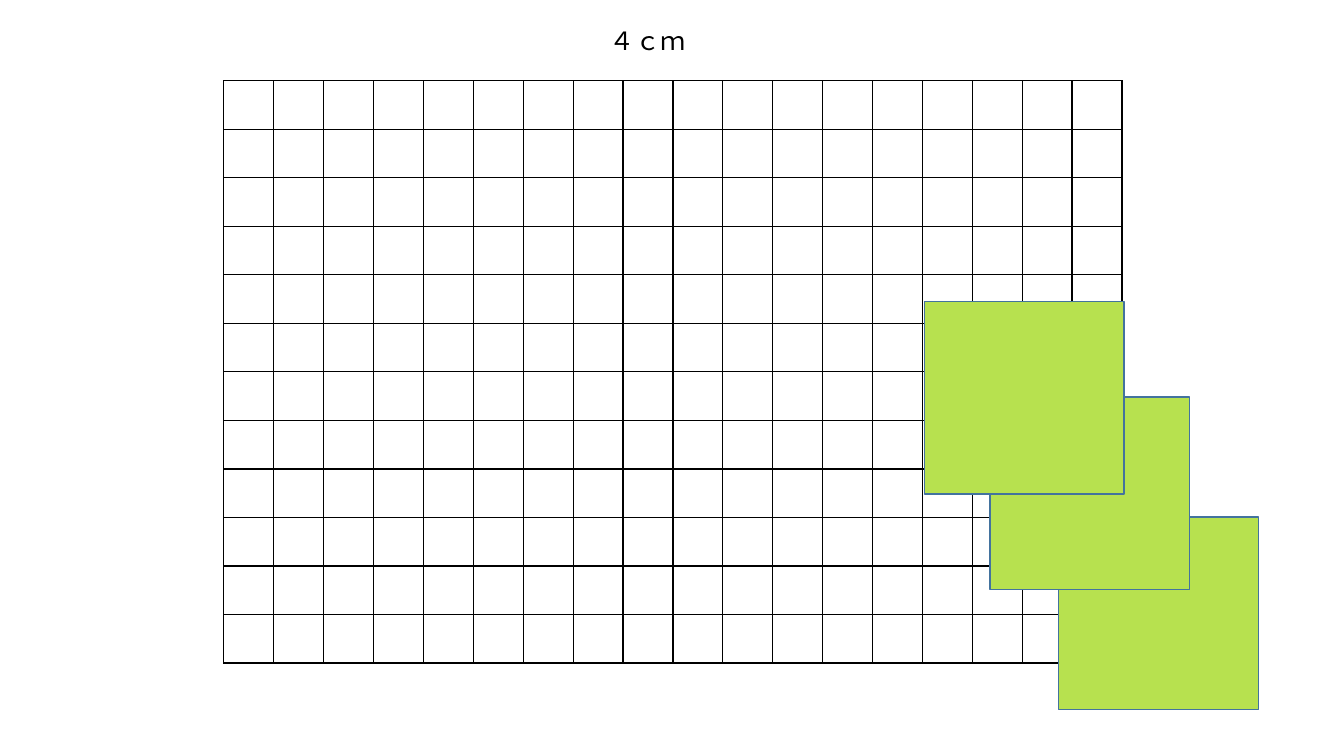
"""Build a slide with a squared grid, its length label and three loose squares."""
from dataclasses import dataclass

from lxml import etree
from pptx import Presentation
from pptx import util as u
from pptx.dml.color import RGBColor
from pptx.enum import shapes, text
from pptx.oxml.ns import qn


@dataclass(frozen=True)
class Theme:
    paper: str = "FFFFFF"
    ink: str = "000000"
    square: str = "B7E14F"
    square_edge: str = "43739E"
    font: str = "Calibri"
    label_size: int = 18
    line_width: int = 1


THEME = Theme()
SLIDE_SIZE = (13.33, 7.5)
LENGTH_LABEL = "４ｃｍ"
LABEL_BOX = (5.95, 0.2, 1.12, 0.4)
GRID = {"columns": 18, "rows": 12, "box": (2.22, 0.8, 8.91, 5.78)}
SQUARE_CORNERS = [(10.5, 5.13), (9.82, 3.94), (9.17, 2.99)]
SQUARE_SIZE = (1.98, 1.91)


def inches(lengths):
    return [u.Inches(length) for length in lengths]


def paint(fill, colour):
    fill.solid()
    fill.fore_color.rgb = RGBColor.from_string(colour)


def rule_cell(cell):
    properties = cell._tc.get_or_add_tcPr()
    for side in ("lnL", "lnR", "lnT", "lnB"):
        edge = etree.SubElement(properties, qn(f"a:{side}"), w=str(u.Pt(THEME.line_width)))
        ink = etree.SubElement(edge, qn("a:solidFill"))
        etree.SubElement(ink, qn("a:srgbClr"), val=THEME.ink)
    paint(cell.fill, THEME.paper)


def add_grid(slide):
    left, top, width, height = inches(GRID["box"])
    grid = slide.shapes.add_table(GRID["rows"], GRID["columns"], left, top, width, height).table
    grid.first_row = grid.horz_banding = False
    for column in grid.columns:
        column.width = width // GRID["columns"]
    for row in grid.rows:
        row.height = height // GRID["rows"]
    for cell in grid.iter_cells():
        rule_cell(cell)


def add_label(slide):
    frame = slide.shapes.add_textbox(*inches(LABEL_BOX)).text_frame
    frame.word_wrap = True
    frame.auto_size = text.MSO_AUTO_SIZE.SHAPE_TO_FIT_TEXT
    label = frame.paragraphs[0]
    label.text = LENGTH_LABEL
    label.font.name = THEME.font
    label.font.size = u.Pt(THEME.label_size)
    label.font.color.rgb = RGBColor.from_string(THEME.ink)


def add_square(slide, corner):
    square = slide.shapes.add_shape(shapes.MSO_SHAPE.RECTANGLE, *inches(corner + SQUARE_SIZE))
    square.shadow.inherit = False
    paint(square.fill, THEME.square)
    paint(square.line.fill, THEME.square_edge)
    square.line.width = u.Pt(THEME.line_width)


def main():
    deck = Presentation()
    deck.slide_width, deck.slide_height = inches(SLIDE_SIZE)
    slide = deck.slides.add_slide(deck.slide_layouts[6])
    paint(slide.background.fill, THEME.paper)
    add_grid(slide)
    add_label(slide)
    for corner in SQUARE_CORNERS:
        add_square(slide, corner)
    deck.save("out.pptx")


if __name__ == "__main__":
    main()
